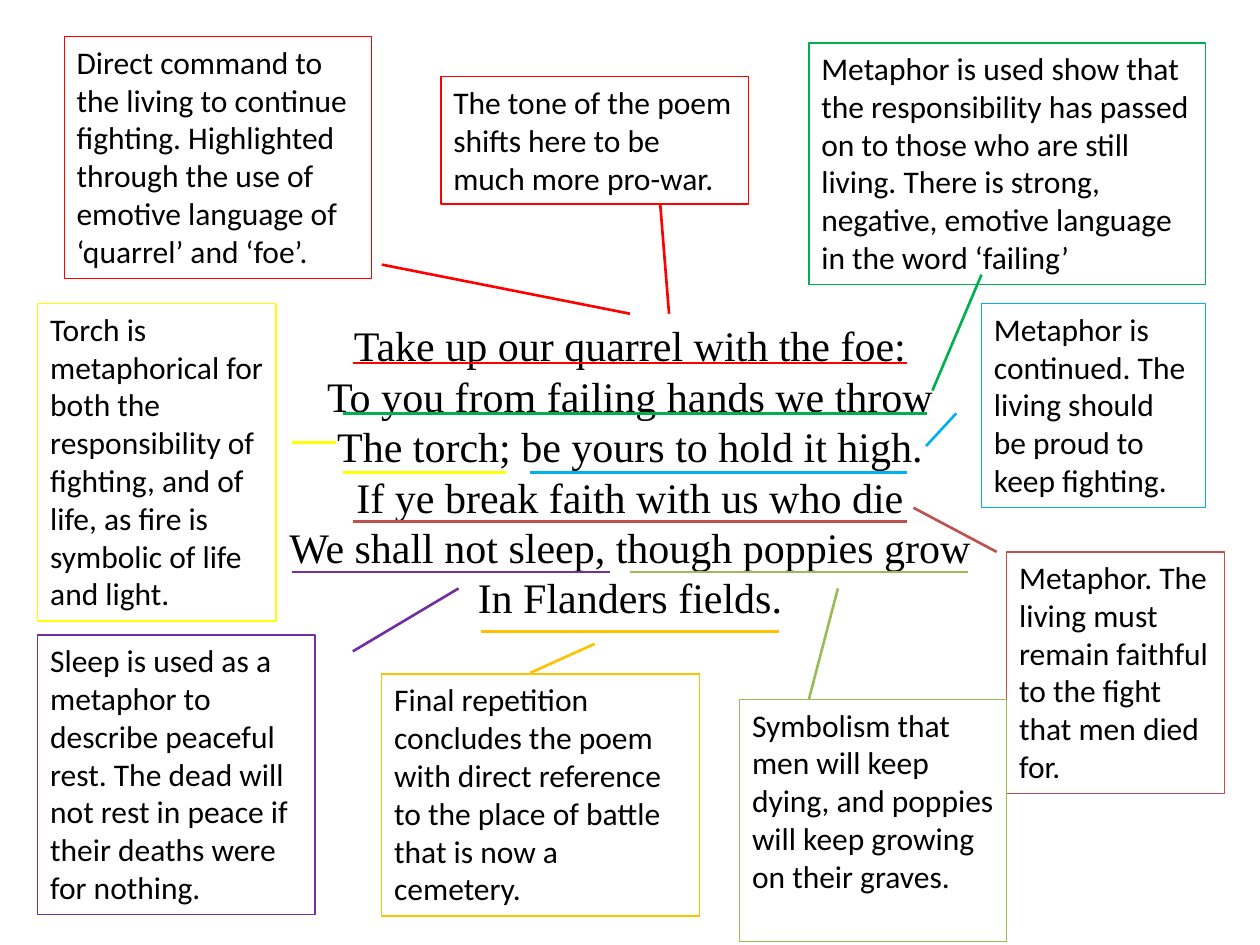
from typing import NamedTuple

from lxml.etree import SubElement
from pptx import Presentation
from pptx.dml.color import RGBColor
from pptx.enum.shapes import MSO_CONNECTOR as Connector
from pptx.enum.text import PP_ALIGN as Align
from pptx.oxml.ns import qn
from pptx.util import Emu, Pt

PX = 9144  # 100 px to the inch

BLACK = RGBColor(0x00, 0x00, 0x00)
RED = RGBColor(0xFF, 0x00, 0x00)
GREEN = RGBColor(0x00, 0xB0, 0x50)
YELLOW = RGBColor(0xFF, 0xFF, 0x00)
BLUE = RGBColor(0x00, 0xB0, 0xF0)
BRICK = RGBColor(0xC0, 0x50, 0x4D)
PURPLE = RGBColor(0x70, 0x30, 0xA0)
OLIVE = RGBColor(0x9B, 0xBB, 0x59)
GOLD = RGBColor(0xFF, 0xC0, 0x00)


class Box(NamedTuple):
    left: int
    top: int
    width: int
    height: int


POEM_BOX = Box(202, 249, 596, 252)
POEM = """Take up our quarrel with the foe:
To you from failing hands we throw
The torch; be yours to hold it high.
If ye break faith with us who die
We shall not sleep, though poppies grow
In Flanders fields."""

# Underlines: colour, start x, end x, y, measured from the poem box
UNDERLINES = [
    (RED, 78, 518, 39),
    (GREEN, 70, 534, 79),
    (YELLOW, 70, 200, 126),
    (BLUE, 219, 518, 126),
    (BRICK, 78, 518, 165),
    (PURPLE, 30, 282, 205),
    (OLIVE, 298, 566, 205),
    (GOLD, 180, 416, 252),
]

# Notes: colour, box, pointer start and end measured from the box, words
NOTES = [
    (RED, Box(51, 29, 244, 192), (252, 181), (449, 220),
     "Direct command to the living to continue fighting. Highlighted through "
     "the use of emotive language of ‘quarrel’ and ‘foe’."),
    (GREEN, Box(642, 34, 315, 192), (137, 184), (98, 276),
     "Metaphor is used show that the responsibility has passed on to those who "
     "are still living. There is strong, negative, emotive language in the "
     "word ‘failing’"),
    (YELLOW, Box(30, 241, 189, 252), (202, 110), (237, 110),
     "Torch is metaphorical for both the responsibility of fighting, and of "
     "life, as fire is symbolic of life and light."),
    (BLUE, Box(779, 241, 178, 162), (-20, 87), (-44, 113),
     "Metaphor is continued. The living should be proud to keep fighting."),
    (RED, Box(350, 61, 244, 101), (174, 101), (181, 188),
     "The tone of the poem shifts here to be much more pro-war."),
    (BRICK, Box(799, 438, 173, 192), (-8, 0), (-74, -35),
     "Metaphor. The living must remain faithful to the fight that men died for."),
    (PURPLE, Box(30, 504, 220, 222), (250, 13), (334, -37),
     "Sleep is used as a metaphor to describe peaceful rest. The dead will not "
     "rest in peace if their deaths were for nothing."),
    (OLIVE, Box(587, 555, 212, 192), (55, 0), (78, -88),
     "Symbolism that men will keep dying, and poppies will keep growing on "
     "their graves."),
    (GOLD, Box(303, 535, 252, 192), (118, -1), (169, -24),
     "Final repetition concludes the poem with direct reference to the place "
     "of battle that is now a cemetery."),
]


def px(length):
    return Emu(length * PX)


def add_text(page, box, words, font="Calibri", size=18, align=Align.LEFT,
             spacing=None, border=None):
    shape = page.shapes.add_textbox(*map(px, box))
    shape.text_frame.word_wrap = True
    para = shape.text_frame.paragraphs[0]
    para.text = words
    para.alignment = align
    para.line_spacing = spacing
    for span in para.runs:
        span.font.name = font
        span.font.size = Pt(size)
        span.font.color.rgb = BLACK
    if border is not None:
        shape.line.color.rgb = border
        shape.line.width = Pt(0.75)


def add_line(page, box, start, end, colour):
    """Draw a line between two points measured from the box's corner."""
    ends = [px(corner + offset) for point in (start, end)
            for corner, offset in zip((box.left, box.top), point)]
    line = page.shapes.add_connector(Connector.STRAIGHT, *ends)
    line.line.color.rgb = colour
    line.line.width = Pt(1.5)
    SubElement(line._element.spPr, qn("a:effectLst"))


def add_poem(page, box):
    add_text(page, box, POEM, font="Times New Roman", size=24,
             align=Align.CENTER, spacing=Pt(28.8))
    for colour, start, end, y in UNDERLINES:
        add_line(page, box, (start, y), (end, y), colour)


def add_note(page, box, colour, start, end, words):
    add_line(page, box, start, end, colour)
    add_text(page, box, words, border=colour)


def main():
    deck = Presentation()
    deck.slide_width, deck.slide_height = px(1000), px(750)
    page = deck.slides.add_slide(deck.slide_layouts[6])
    add_poem(page, POEM_BOX)
    for colour, box, start, end, words in NOTES:
        add_note(page, box, colour, start, end, words)
    deck.save("out.pptx")


if __name__ == "__main__":
    main()
